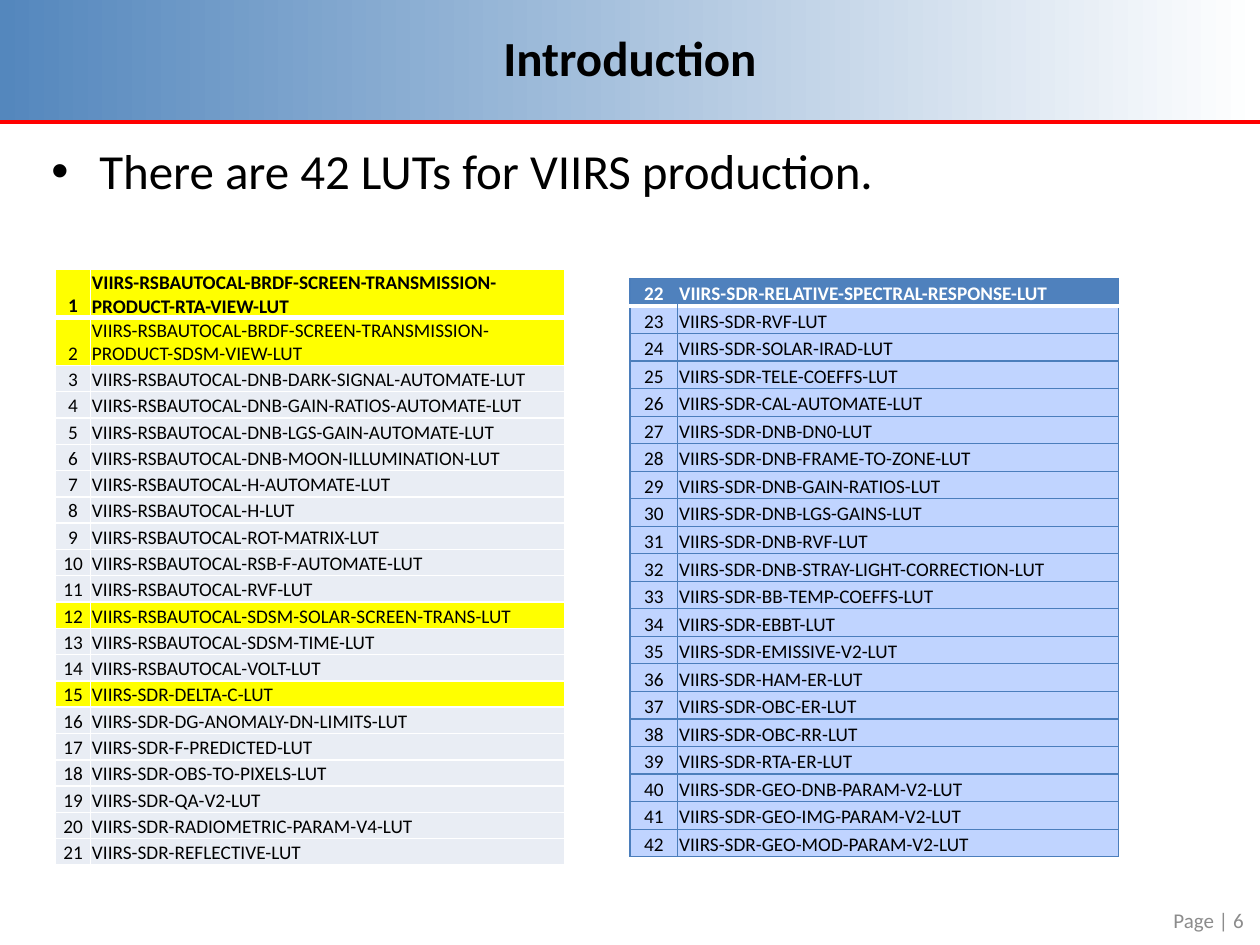
from dataclasses import dataclass

from lxml import etree
from pptx import Presentation, util as u
from pptx.dml.color import RGBColor
from pptx.enum import shapes, text
from pptx.oxml import ns


@dataclass(frozen=True)
class Theme:
    font: str = "Calibri"
    black: str = "000000"
    white: str = "FFFFFF"
    page_grey: str = "8C8C8C"
    header_blue: str = "5487BD"
    rule_red: str = "FF0000"
    highlight: str = "FFFF00"
    pale_grey: str = "E9EDF4"
    pale_blue: str = "C0D4FF"
    first_row_blue: str = "4F81BD"
    grid_blue: str = "4B7EBC"
    heading_size: int = 28
    table_size: int = 11
    page_size: int = 12


THEME = Theme()


@dataclass(frozen=True)
class Line:
    color: str
    points: float


@dataclass(frozen=True)
class LutTable:
    """A numbered list of LUT names with the look of its grid."""
    first_number: int
    names: tuple[str, ...]
    left: float
    top: float
    height: float
    columns: tuple[float, float]
    fill: str
    grid: Line
    first_fill: str
    first_color: str
    first_bottom: Line
    first_divider: bool
    highlighted: tuple[int, ...] = ()
    two_line: tuple[int, ...] = ()
    two_line_height: float = 0.38

    def row_height(self, number: int) -> float:
        if number in self.two_line:
            return self.two_line_height
        tall = len(self.two_line)
        return (self.height - tall * self.two_line_height) / (len(self.names) - tall)


AUTOCAL = tuple(f"VIIRS-RSBAUTOCAL-{part}-LUT" for part in (
    "BRDF-SCREEN-TRANSMISSION-PRODUCT-RTA-VIEW",
    "BRDF-SCREEN-TRANSMISSION-PRODUCT-SDSM-VIEW",
    "DNB-DARK-SIGNAL-AUTOMATE", "DNB-GAIN-RATIOS-AUTOMATE",
    "DNB-LGS-GAIN-AUTOMATE", "DNB-MOON-ILLUMINATION", "H-AUTOMATE", "H",
    "ROT-MATRIX", "RSB-F-AUTOMATE", "RVF", "SDSM-SOLAR-SCREEN-TRANS",
    "SDSM-TIME", "VOLT"))
SDR = tuple(f"VIIRS-SDR-{part}-LUT" for part in (
    "DELTA-C", "DG-ANOMALY-DN-LIMITS", "F-PREDICTED", "OBS-TO-PIXELS",
    "QA-V2", "RADIOMETRIC-PARAM-V4", "REFLECTIVE",
    "RELATIVE-SPECTRAL-RESPONSE", "RVF", "SOLAR-IRAD", "TELE-COEFFS",
    "CAL-AUTOMATE", "DNB-DN0", "DNB-FRAME-TO-ZONE", "DNB-GAIN-RATIOS",
    "DNB-LGS-GAINS", "DNB-RVF", "DNB-STRAY-LIGHT-CORRECTION",
    "BB-TEMP-COEFFS", "EBBT", "EMISSIVE-V2", "HAM-ER", "OBC-ER", "OBC-RR",
    "RTA-ER", "GEO-DNB-PARAM-V2", "GEO-IMG-PARAM-V2", "GEO-MOD-PARAM-V2"))
LUTS = AUTOCAL + SDR
HALF = len(LUTS) // 2

TABLES = (
    LutTable(1, LUTS[:HALF], 0.44, 2.14, 4.73, (0.28, 3.76),
             fill=THEME.pale_grey, grid=Line(THEME.white, 1),
             first_fill=THEME.highlight, first_color=THEME.black,
             first_bottom=Line(THEME.white, 3), first_divider=True,
             highlighted=(2, 12, 15), two_line=(1, 2)),
    LutTable(HALF + 1, LUTS[HALF:], 5, 2.21, 4.59, (0.38, 3.5),
             fill=THEME.pale_blue, grid=Line(THEME.grid_blue, 0.75),
             first_fill=THEME.first_row_blue, first_color=THEME.white,
             first_bottom=Line(THEME.white, 2), first_divider=False),
)


def rgb(color: str) -> RGBColor:
    return RGBColor.from_string(color)


def write(frame, words: str, *, size: int, color: str = THEME.black,
          bold: bool = False, align=text.PP_ALIGN.LEFT, bullet: str = "") -> None:
    paragraph = frame.paragraphs[0]
    paragraph.alignment = align
    if bullet:
        properties = paragraph._p.get_or_add_pPr()
        indent = u.Inches(0.38)
        properties.set("marL", str(indent))
        properties.set("indent", str(-indent))
        etree.SubElement(properties, ns.qn("a:buFont"), typeface="Arial")
        etree.SubElement(properties, ns.qn("a:buChar"), char=bullet)
    run = paragraph.add_run()
    run.text = words
    font = run.font
    font.name, font.size, font.bold = THEME.font, u.Pt(size), bold
    font.color.rgb = rgb(color)


def add_text(slide, words: str, box: tuple[float, float, float, float],
             anchor=text.MSO_ANCHOR.MIDDLE, **style) -> None:
    frame = slide.shapes.add_textbox(*map(u.Inches, box)).text_frame
    frame.word_wrap = True
    frame.vertical_anchor = anchor
    write(frame, words, **style)


def set_borders(cell, **sides: Line | None) -> None:
    """Borders come first in the cell properties, in the order L, R, T, B."""
    properties = cell._tc.get_or_add_tcPr()
    for place, side in enumerate("LRTB"):
        line = sides[side]
        border = etree.Element(ns.qn(f"a:ln{side}"))
        properties.insert(place, border)
        if line is None:
            border.set("w", "0")
            etree.SubElement(border, ns.qn("a:noFill"))
        else:
            border.set("w", str(u.Pt(line.points)))
            fill = etree.SubElement(border, ns.qn("a:solidFill"))
            etree.SubElement(fill, ns.qn("a:srgbClr"), val=line.color)


def add_lut_table(slide, luts: LutTable) -> None:
    table = slide.shapes.add_table(
        len(luts.names), 2, u.Inches(luts.left), u.Inches(luts.top),
        u.Inches(sum(luts.columns)), u.Inches(luts.height)).table
    table.first_row = table.horz_banding = False
    for column, width in zip(table.columns, luts.columns):
        column.width = u.Inches(width)
    for index, name in enumerate(luts.names):
        number = luts.first_number + index
        first = index == 0
        fill = THEME.highlight if number in luts.highlighted else luts.fill
        divider = luts.grid if luts.first_divider or not first else None
        table.rows[index].height = u.Inches(luts.row_height(number))
        for side, words in enumerate((str(number), name)):
            cell = table.cell(index, side)
            cell.margin_left = cell.margin_right = cell.margin_top = u.Inches(0.01)
            cell.margin_bottom = 0
            cell.vertical_anchor = text.MSO_ANCHOR.BOTTOM
            cell.fill.solid()
            cell.fill.fore_color.rgb = rgb(luts.first_fill if first else fill)
            set_borders(cell,
                        L=divider if side else luts.grid,
                        R=luts.grid if side else divider,
                        T=luts.first_bottom if index == 1 else luts.grid,
                        B=luts.first_bottom if first else luts.grid)
            write(cell.text_frame, words, size=THEME.table_size, bold=first,
                  color=luts.first_color if first else THEME.black,
                  align=text.PP_ALIGN.LEFT if side else text.PP_ALIGN.CENTER)


def add_header(slide) -> None:
    band = slide.shapes.add_shape(
        shapes.MSO_SHAPE.RECTANGLE, 0, u.Inches(-0.01), u.Inches(10), u.Inches(0.97))
    band.shadow.inherit = False
    band.line.fill.background()
    band.fill.gradient()
    band.fill.gradient_angle = 0
    for stop, color in zip(band.fill.gradient_stops, (THEME.header_blue, THEME.white)):
        stop.color.rgb = rgb(color)
    rule = slide.shapes.add_connector(
        shapes.MSO_CONNECTOR.STRAIGHT, 0, u.Inches(0.97), u.Inches(10), u.Inches(0.97))
    rule.line.color.rgb = rgb(THEME.rule_red)
    rule.line.width = u.Pt(2.25)
    etree.SubElement(rule._element.spPr, ns.qn("a:effectLst"))


def main() -> None:
    deck = Presentation()
    deck.slide_width, deck.slide_height = u.Inches(10), u.Inches(7.5)
    slide = deck.slides.add_slide(deck.slide_layouts[6])

    # Header band and title
    add_header(slide)
    add_text(slide, "Introduction", (0.5, 0, 9, 0.9), size=THEME.heading_size,
             bold=True, align=text.PP_ALIGN.CENTER)

    # LUT lists
    for luts in TABLES:
        add_lut_table(slide, luts)

    # Page number and statement
    add_text(slide, "Page | 6", (7.64, 7.1, 2.33, 0.4), size=THEME.page_size,
             color=THEME.page_grey, align=text.PP_ALIGN.RIGHT)
    add_text(slide, "There are 42 LUTs for VIIRS production.",
             (0.31, 1.07, 9.48, 6.03), anchor=text.MSO_ANCHOR.TOP,
             size=THEME.heading_size, bullet="•")

    deck.save("out.pptx")


if __name__ == "__main__":
    main()
